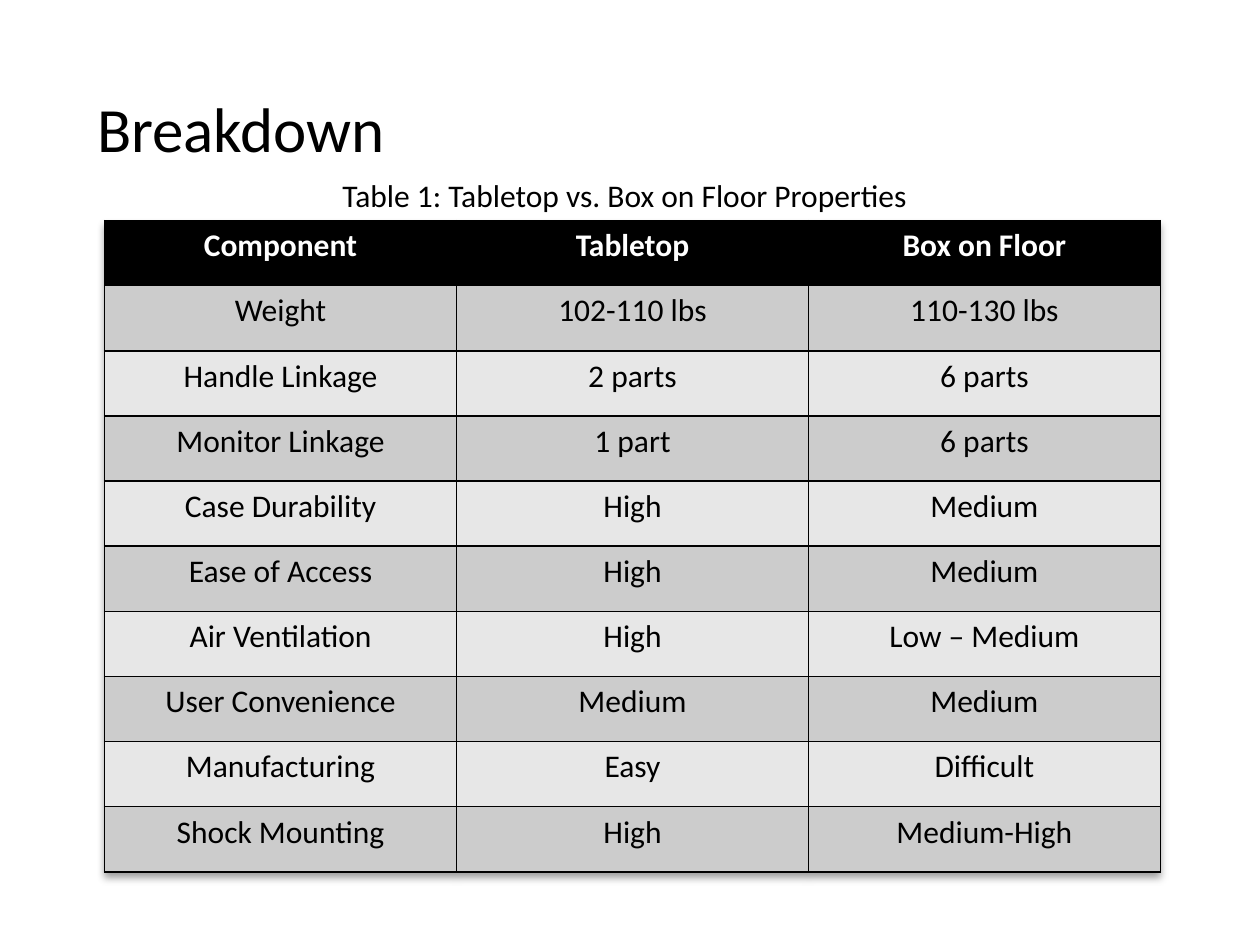
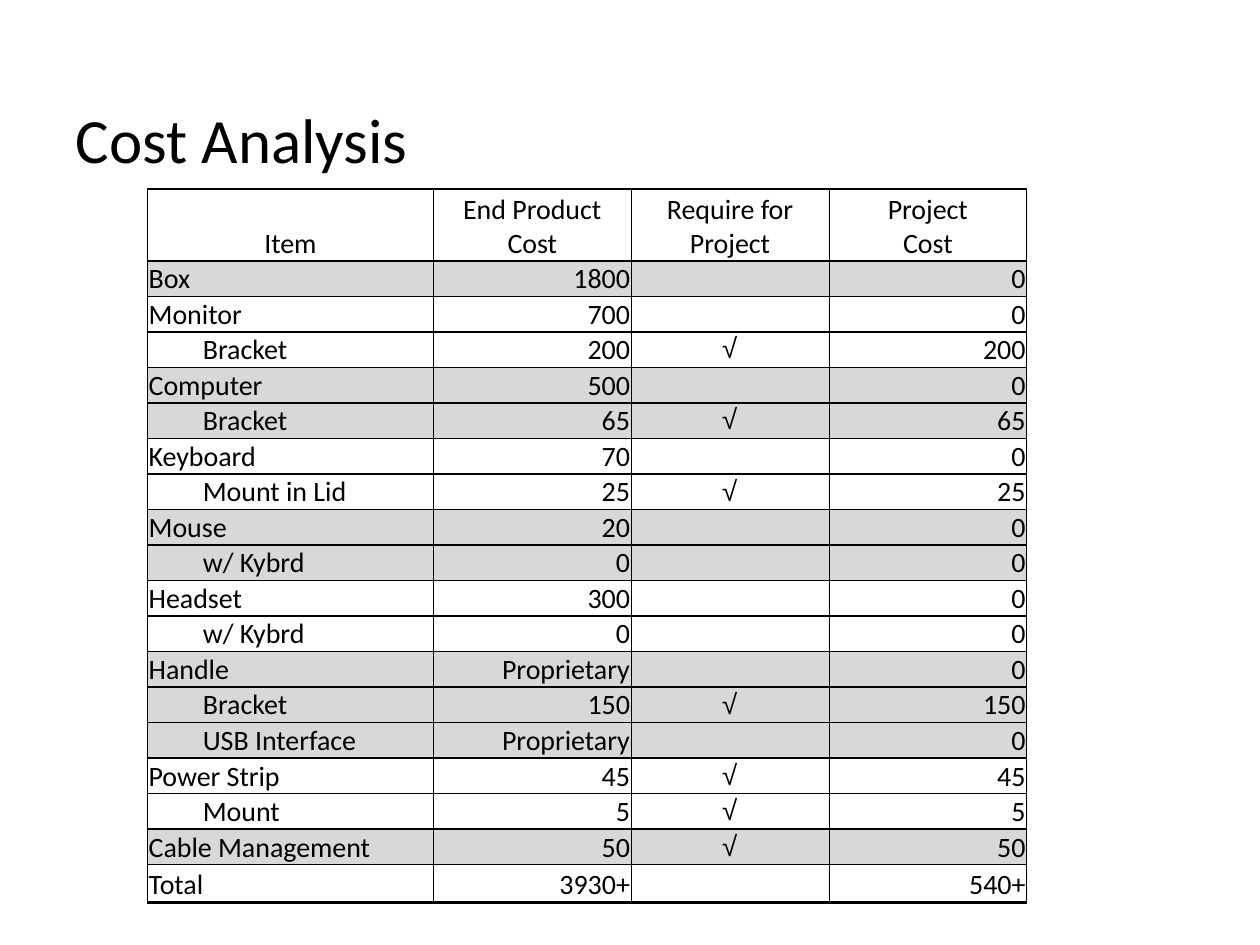
from dataclasses import dataclass

from lxml import etree
from pptx import Presentation
from pptx import util as u
from pptx.dml.color import RGBColor
from pptx.enum import text
from pptx.oxml import ns

TITLE_ONLY = 5
NO_STYLE = "{2D5ABB26-0587-4C30-8999-92F81FD0307C}"
LEFT, CENTER, RIGHT = text.PP_ALIGN.LEFT, text.PP_ALIGN.CENTER, text.PP_ALIGN.RIGHT


@dataclass(frozen=True)
class Theme:
    font: str = "Calibri"
    mark_font: str = "Courier New"
    ink: str = "000000"
    paper: str = "FFFFFF"
    band_dark: str = "CCCCCC"
    band_light: str = "E7E7E7"
    group: str = "D8D8D8"
    title_size: int = 36
    text_size: int = 18
    cost_size: int = 16


THEME = Theme()

PROPERTIES = [
    ("Component", "Tabletop", "Box on Floor"),
    ("Weight", "102-110 lbs", "110-130 lbs"),
    ("Handle Linkage", "2 parts", "6 parts"),
    ("Monitor Linkage", "1 part", "6 parts"),
    ("Case Durability", "High", "Medium"),
    ("Ease of Access", "High", "Medium"),
    ("Air Ventilation", "High", "Low – Medium"),
    ("User Convenience", "Medium", "Medium"),
    ("Manufacturing", "Easy", "Difficult"),
    ("Shock Mounting", "High", "Medium-High"),
]

COST_HEADINGS = ("Item", "End Product\nCost", "Require for\nProject", "Project\nCost")

# Label, is a sub-item, end product cost, required for the project
COSTS = [
    ("Box", False, 1800, False),
    ("Monitor", False, 700, False),
    ("Bracket", True, 200, True),
    ("Computer", False, 500, False),
    ("Bracket", True, 65, True),
    ("Keyboard", False, 70, False),
    ("Mount in Lid", True, 25, True),
    ("Mouse", False, 20, False),
    ("w/ Kybrd", True, 0, False),
    ("Headset", False, 300, False),
    ("w/ Kybrd", True, 0, False),
    ("Handle", False, "Proprietary", False),
    ("Bracket", True, 150, True),
    ("USB Interface", True, "Proprietary", False),
    ("Power Strip", False, 45, True),
    ("Mount", True, 5, True),
    ("Cable Management", False, 50, True),
]


# Text
def write(paragraph, words, size, color=THEME.ink, align=LEFT, bold=False, font=THEME.font):
    paragraph.text = words
    paragraph.alignment = align
    paragraph.font.name = font
    paragraph.font.size = u.Pt(size)
    paragraph.font.bold = bold
    paragraph.font.color.rgb = RGBColor.from_string(color)


def place(shape, left, top, width, height):
    shape.left, shape.top = u.Inches(left), u.Inches(top)
    shape.width, shape.height = u.Inches(width), u.Inches(height)


def add_titled_slide(presentation, words, left, top, width, height):
    slide = presentation.slides.add_slide(presentation.slide_layouts[TITLE_ONLY])
    title = slide.shapes.title
    place(title, left, top, width, height)
    frame = title.text_frame
    frame.auto_size = text.MSO_AUTO_SIZE.NONE
    frame.vertical_anchor = text.MSO_ANCHOR.TOP
    frame.word_wrap = True
    write(frame.paragraphs[0], words, THEME.title_size)
    return slide


def add_caption(slide, words, left, top, width, height):
    box = slide.shapes.add_textbox(*map(u.Inches, (left, top, width, height)))
    box.text_frame.word_wrap = True
    write(box.text_frame.paragraphs[0], words, THEME.text_size)


# Tables
def add_plain_table(slide, left, top, widths, heights):
    frame = slide.shapes.add_table(
        len(heights), len(widths),
        *map(u.Inches, (left, top, sum(widths), sum(heights))))
    table = frame.table
    for column, width in zip(table.columns, widths):
        column.width = u.Inches(width)
    for row, height in zip(table.rows, heights):
        row.height = u.Inches(height)
    table.first_row = table.horz_banding = False
    frame._element.find(".//" + ns.qn("a:tableStyleId")).text = NO_STYLE
    return table


def add_table_shadow(table):
    effects = etree.Element(ns.qn("a:effectLst"))
    shadow = etree.SubElement(effects, ns.qn("a:outerShdw"), blurRad="50800",
                              dist="38100", dir="5400000", rotWithShape="0")
    color = etree.SubElement(shadow, ns.qn("a:srgbClr"), val=THEME.ink)
    etree.SubElement(color, ns.qn("a:alpha"), val="40000")
    table._tbl.tblPr.insert(0, effects)


def format_cell(cell, fill, borders):
    """Borders maps sides (L, R, T, B) to line widths in points."""
    properties = cell._tc.get_or_add_tcPr()
    for side in "LRTB":
        if side in borders:
            line = etree.SubElement(properties, ns.qn("a:ln" + side),
                                    w=str(u.Pt(borders[side])))
            solid = etree.SubElement(line, ns.qn("a:solidFill"))
            etree.SubElement(solid, ns.qn("a:srgbClr"), val=THEME.ink)
    if fill:
        cell.fill.solid()
        cell.fill.fore_color.rgb = RGBColor.from_string(fill)
    else:
        cell.fill.background()


def fill_cost_row(table, row, label, values, fill=None, sub_item=False,
                  top=1, bottom=1, heading=False):
    """The two first columns form one cell, or an indent and a sub-item."""
    words = ["", label, *values] if sub_item else [label, "", *values]
    aligns = [LEFT, LEFT, RIGHT, CENTER, RIGHT]
    if heading:
        aligns = [CENTER] * len(words)
    else:
        mark_column = 3
    if not sub_item:
        table.cell(row, 0).merge(table.cell(row, 1))
    for column, (word, align) in enumerate(zip(words, aligns)):
        cell = table.cell(row, column)
        borders = {"L": 0.5, "R": 0.5, "T": top, "B": bottom}
        if sub_item and column < 2:
            del borders["RL"[column]]
        format_cell(cell, fill, borders)
        cell.margin_left = cell.margin_right = cell.margin_top = u.Inches(0.01)
        cell.margin_bottom = 0
        cell.vertical_anchor = text.MSO_ANCHOR.BOTTOM
        is_mark = not heading and column == mark_column
        write(cell.text_frame.paragraphs[0], word, THEME.cost_size, align=align,
              font=THEME.mark_font if is_mark else THEME.font)


# Slides
def build_breakdown(presentation):
    slide = add_titled_slide(presentation, "Breakdown", 0.67, 0.66, 6.92, 0.71)
    columns, rows = len(PROPERTIES[0]), len(PROPERTIES)
    table = add_plain_table(slide, 0.83, 1.75, [8.38 / columns] * columns,
                            [5.17 / rows] * rows)
    add_table_shadow(table)
    for row, values in enumerate(PROPERTIES):
        heading = row == 0
        band = THEME.band_dark if row % 2 else THEME.band_light
        for column, words in enumerate(values):
            cell = table.cell(row, column)
            format_cell(cell, THEME.ink if heading else band, dict.fromkeys("LRTB", 1))
            write(cell.text_frame.paragraphs[0], words, THEME.text_size,
                  THEME.paper if heading else THEME.ink, CENTER, heading)
    add_caption(slide, "Table 1: Tabletop vs. Box on Floor Properties",
                2.62, 1.35, 5.17, 0.4)


def build_cost_analysis(presentation):
    slide = add_titled_slide(presentation, "Cost Analysis", 0.5, 0.75, 3.2, 0.71)
    heading_height, total_height, table_height = 0.57, 0.3, 5.58
    item_height = (table_height - heading_height - total_height) / len(COSTS)
    heights = [heading_height] + [item_height] * len(COSTS) + [total_height]
    table = add_plain_table(slide, 1.17, 1.5, [0.43, 1.84] + [1.57] * 3, heights)

    fill_cost_row(table, 0, COST_HEADINGS[0], COST_HEADINGS[1:], top=1.5, heading=True)
    shaded = False
    product_total = project_total = 0
    for row, (label, sub_item, cost, required) in enumerate(COSTS, start=1):
        if not sub_item:
            shaded = not shaded
        project_cost = cost if required else 0
        product_total += cost if isinstance(cost, int) else 0
        project_total += project_cost
        values = (str(cost), "√" if required else "", str(project_cost))
        fill_cost_row(table, row, label, values, THEME.group if shaded else None, sub_item)
    fill_cost_row(table, len(COSTS) + 1, "Total",
                  (f"{product_total}+", "", f"{project_total}+"), bottom=1.5)


def main():
    presentation = Presentation()
    presentation.slide_width, presentation.slide_height = u.Inches(10), u.Inches(7.5)
    build_breakdown(presentation)
    build_cost_analysis(presentation)
    presentation.save("out.pptx")


if __name__ == "__main__":
    main()
